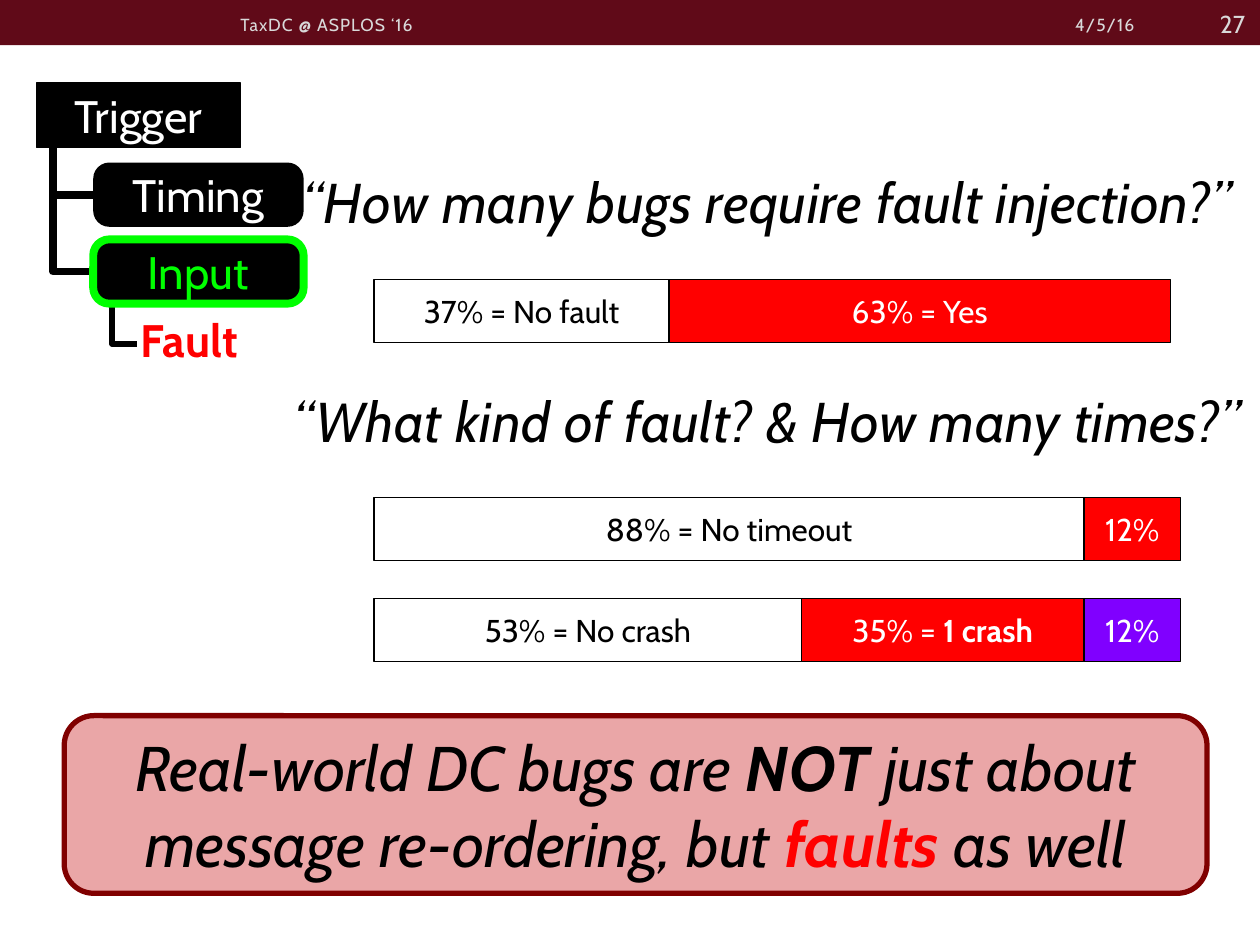
import pptx
import pptx.util
import pptx.dml.color
import pptx.enum.shapes
import pptx.enum.text
import pptx.oxml
from pptx.util import Inches

FONT = "Cabin"
COLORS = {
    "black": "000000", "white": "FFFFFF", "red": "FF0000", "green": "00FF00",
    "purple": "8000FF", "maroon": "600A18", "gray": "D9D9D9",
    "rose": "EAA6A7", "dark red": "800000",
}
SHAPES = pptx.enum.shapes.MSO_SHAPE
ALIGN = pptx.enum.text.PP_ALIGN
ANCHOR = pptx.enum.text.MSO_ANCHOR


def rgb(name):
    """Return the named colour."""
    return pptx.dml.color.RGBColor.from_string(COLORS[name])


def write(shape, *lines, size=18, color="black", bold=False, italic=False,
          align=ALIGN.CENTER, anchor=ANCHOR.MIDDLE, spacing=0, wrap=True):
    """Fill a shape with lines, each a string or a list of (text, overrides) spans."""
    frame = shape.text_frame
    frame.word_wrap = wrap
    frame.vertical_anchor = anchor
    for index, line in enumerate(lines):
        para = frame.paragraphs[0] if index == 0 else frame.add_paragraph()
        para.alignment = align
        spans = [(line, {})] if isinstance(line, str) else line
        for text, overrides in spans:
            span = para.add_run()
            span.text = text
            span.font.name = FONT
            span.font.size = pptx.util.Pt(size)
            span.font.bold = overrides.get("bold", bold)
            span.font.italic = italic
            span.font.color.rgb = rgb(overrides.get("color", color))
            if spacing:
                span._r.get_or_add_rPr().set("spc", str(spacing))


def add_text(page, box, *lines, **style):
    """Place a text box."""
    write(page.shapes.add_textbox(*map(Inches, box)), *lines, **style)


def add_block(page, box, fill, *lines, kind=SHAPES.RECTANGLE, line=None,
              line_width=0.85, corner=None, **style):
    """Place a filled shape with optional outline and text."""
    shape = page.shapes.add_shape(kind, *map(Inches, box))
    shape.shadow.inherit = False
    shape.fill.solid()
    shape.fill.fore_color.rgb = rgb(fill)
    if line:
        shape.line.color.rgb = rgb(line)
        shape.line.width = pptx.util.Pt(line_width)
    else:
        shape.line.fill.background()
    if corner:
        shape.adjustments[0] = corner
    write(shape, *lines, **style)


def add_branch(page, x, y, run, drop, width):
    """Draw an elbow going down from (x, y), then right."""
    left = x + (run - drop) / 2
    top = y + (drop - run) / 2
    branch = page.shapes.add_connector(
        pptx.enum.shapes.MSO_CONNECTOR.ELBOW,
        Inches(left + drop), Inches(top), Inches(left), Inches(top + run))
    branch.line.color.rgb = rgb("black")
    branch.line.width = pptx.util.Pt(width)
    properties = branch._element.spPr
    properties.xfrm.set("rot", "16200000")
    properties.prstGeom.set("prst", "bentConnector2")
    properties.append(pptx.oxml.parse_xml(
        '<a:effectLst xmlns:a="http://schemas.openxmlformats.org/drawingml/2006/main"/>'))


def add_header(page, left, top, width, height):
    """Draw the band with talk name, date and page number."""
    add_block(page, (left, top, width, height), "maroon")
    small = dict(size=10, color="gray", spacing=60)
    add_text(page, (left + 7.31, top + 0.05, 1.79, 0.29), "4/5/16",
             align=ALIGN.RIGHT, **small)
    add_text(page, (left + 1.81, top + 0.05, 3.56, 0.29), "TaxDC @ ASPLOS ‘16",
             align=ALIGN.LEFT, **small)
    add_text(page, (left + 9.1, top - 0.01, 0.88, 0.4), "27",
             size=14, color="gray", align=ALIGN.RIGHT)


def add_tree(page, left, top, width, height):
    """Draw the trigger taxonomy with its highlighted input branch."""
    node = 0.51
    child_left, child_width = left + 0.45, width - 0.45
    timing_top, input_top = top + 0.63, top + 1.24
    stem, bottom = left + 0.13, top + node
    for child_top in (input_top, timing_top):
        add_branch(page, stem, bottom, child_left - stem,
                   child_top + node / 2 - bottom, 4.5)
    add_branch(page, left + 0.6, input_top + node, 0.2, 0.32, 3)
    add_block(page, (left, top, 1.62, node), "black", "Trigger",
              line="black", line_width=0.75, size=26, color="white")
    rounded = dict(kind=SHAPES.ROUNDED_RECTANGLE, corner=0.25, size=26)
    add_block(page, (child_left, timing_top, child_width, node), "black",
              "Timing", color="white", **rounded)
    add_block(page, (child_left, input_top, child_width, node), "black",
              "Input", color="green", line="green", line_width=4.5, **rounded)
    add_text(page, (left + 0.73, top + height - 0.54, 1.16, 0.54), "Fault",
             size=26, color="red", bold=True, align=ALIGN.LEFT,
             anchor=ANCHOR.TOP, wrap=False)


def add_question(page, left, top, width, height, text):
    """Place an italic question."""
    add_text(page, (left, top, width, height), text, size=32, italic=True,
             spacing=30, anchor=ANCHOR.TOP)


def add_share_bar(page, left, top, width, height, shares):
    """Draw a bar split in proportion to its (percent, fill, label) shares."""
    for percent, fill, label in shares:
        part = width * percent / 100
        add_block(page, (left, top, part, height), fill, label, line="black",
                  color="black" if fill == "white" else "white")
        left += part


def add_conclusion(page, left, top, width, height):
    """Place the rounded take-away panel."""
    add_block(
        page, (left, top, width, height), "rose",
        [("Real-world DC bugs are ", {}), ("NOT", {"bold": True}),
         (" just about", {})],
        [("message re-ordering, but ", {}),
         ("faults ", {"bold": True, "color": "red"}), ("as well", {})],
        kind=SHAPES.ROUNDED_RECTANGLE, line="dark red", line_width=3,
        size=36, italic=True)


def main():
    """Build the slide."""
    deck = pptx.Presentation()
    deck.slide_width, deck.slide_height = Inches(10), Inches(7.5)
    page = deck.slides.add_slide(deck.slide_layouts[6])
    add_header(page, 0, 0, 10, 0.36)
    add_tree(page, 0.29, 0.66, 2.12, 2.31)
    add_question(page, 2.19, 1.28, 7.81, 0.79,
                 "“How many bugs require fault injection?”")
    add_share_bar(page, 2.97, 2.22, 6.32, 0.5, [
        (37, "white", "37% = No fault"), (63, "red", "63% = Yes")])
    add_question(page, 2.19, 3.02, 7.81, 0.79,
                 "“What kind of fault? & How many times?”")
    add_share_bar(page, 2.97, 3.95, 6.4, 0.5, [
        (88, "white", "88% = No timeout"), (12, "red", "12%")])
    add_share_bar(page, 2.97, 4.75, 6.4, 0.5, [
        (53, "white", "53% = No crash"),
        (35, "red", [("35% = ", {}), ("1 crash", {"bold": True})]),
        (12, "purple", "12%")])
    add_conclusion(page, 0.51, 5.68, 9.07, 1.41)
    deck.save("out.pptx")


if __name__ == "__main__":
    main()
